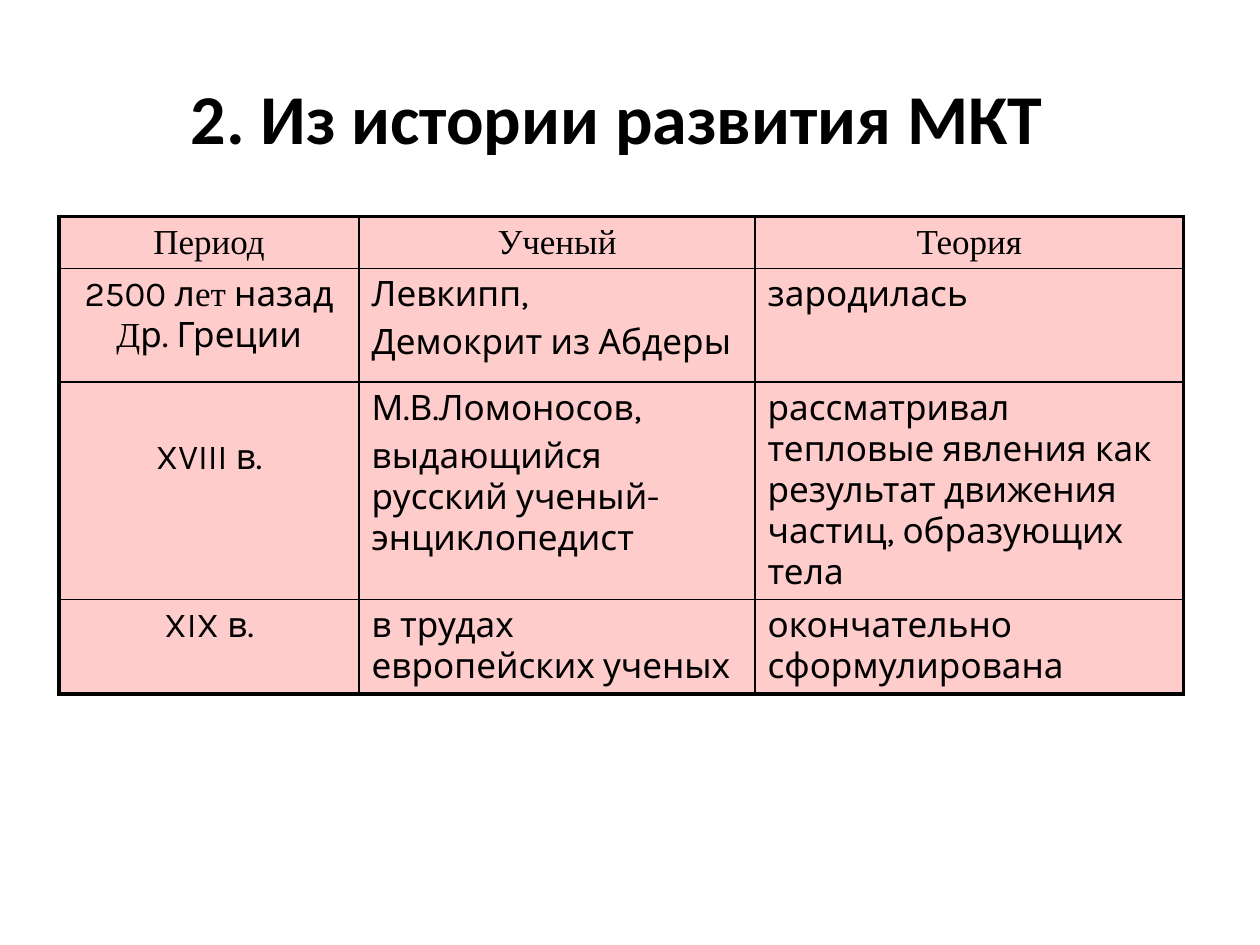
"""Build a slide with a table on the history of kinetic theory."""
from lxml.etree import SubElement
from pptx import Presentation
from pptx.dml.color import RGBColor
from pptx.enum.text import MSO_ANCHOR, PP_ALIGN
from pptx.oxml.ns import qn
from pptx.util import Cm, Pt

BLACK = RGBColor(0, 0, 0)
PINK = RGBColor(0xFF, 0xCC, 0xCC)
HEAD, SANS, SERIF = "Calibri", "Karla", "Times New Roman"
THIN, THICK = Pt(1), Pt(2.25)
COLS = (6.05, 7.98, 8.64)
ROWS = (1.04, 2.29, 4.37, 1.9)
CELLS = (
    ([[("Период", SERIF)]], [[("Ученый", SERIF)]], [[("Теория", SERIF)]]),
    (
        [[("2500 л", SANS), ("ет", SERIF), (" назад ", SANS),
          ("Д", SERIF), ("р. Греции", SANS)]],
        [[("Левкипп,", SANS)], [("Демокрит из Абдеры", SANS)]],
        [[("зародилась", SANS)]],
    ),
    (
        [[("XVIII в.", SANS)]],
        [[("М.В.Ломоносов,", SANS)],
         [("выдающийся русский ученый-энциклопедист", SANS)]],
        [[("рассматривал тепловые явления как результат движения "
           "частиц, образующих тела", SANS)]],
    ),
    (
        [[("XIX в.", SANS)]],
        [[("в трудах европейских ученых", SANS)]],
        [[("окончательно сформулирована", SANS)]],
    ),
)


class Deck:
    """Hold the style and the current slide."""

    def __init__(self):
        self.file = Presentation()
        self.file.slide_width, self.file.slide_height = Cm(25.4), Cm(19.05)
        self.slide = self.file.slides.add_slide(self.file.slide_layouts[0])
        sub = self.slide.placeholders[1].element
        sub.getparent().remove(sub)

    def run(self, para, text, face, size, bold=False):
        """Add one styled run."""
        run = para.add_run()
        run.text = text
        font = run.font
        font.name, font.size, font.bold = face, Pt(size), bold
        font.color.rgb = BLACK

    def title(self, text, left, top, width, height):
        """Place the title."""
        box = self.slide.shapes.title
        box.left, box.top = Cm(left), Cm(top)
        box.width, box.height = Cm(width), Cm(height)
        frame = box.text_frame
        frame.vertical_anchor = MSO_ANCHOR.MIDDLE
        para = frame.paragraphs[0]
        para.alignment = PP_ALIGN.CENTER
        self.run(para, text, HEAD, 40, True)

    def edge(self, cell, side, width):
        """Draw one border of a cell."""
        props = cell._tc.get_or_add_tcPr()
        line = SubElement(props, qn(f"a:ln{side}"), w=str(int(width)))
        fill = SubElement(line, qn("a:solidFill"))
        SubElement(fill, qn("a:srgbClr"), val=str(BLACK))

    def cell(self, cell, paras, align, outer):
        """Fill, frame and write one cell."""
        for side in "LRTB":
            self.edge(cell, side, THICK if side in outer else THIN)
        cell.fill.solid()
        cell.fill.fore_color.rgb = PINK
        frame = cell.text_frame
        for i, runs in enumerate(paras):
            para = frame.add_paragraph() if i else frame.paragraphs[0]
            para.alignment = align
            para.space_before = Pt(4 if i else 0)
            for text, face in runs:
                self.run(para, text, face, 20)

    def table(self, rows, left, top):
        """Add the table and return it."""
        table = self.slide.shapes.add_table(
            len(ROWS), len(COLS), Cm(left), Cm(top),
            Cm(sum(COLS)), Cm(sum(ROWS))).table
        table.first_row = table.horz_banding = False
        for col, width in zip(table.columns, COLS):
            col.width = Cm(width)
        for row, height in zip(table.rows, ROWS):
            row.height = Cm(height)
        for r, row in enumerate(rows):
            for c, paras in enumerate(row):
                mid = r == 0 or c == 0
                align = PP_ALIGN.CENTER if mid else PP_ALIGN.LEFT
                outer = {0: "L", len(COLS) - 1: "R"}.get(c, "")
                outer += {0: "T", len(ROWS) - 1: "B"}.get(r, "")
                self.cell(table.cell(r, c), paras, align, outer)
        return table

    def save(self):
        """Write the file."""
        self.file.save("out.pptx")


def main():
    """Build the slide."""
    deck = Deck()
    deck.title("2. Из истории развития МКТ ", 2.11, 1.07, 20.95, 2.54)
    table = deck.table(CELLS, 1.19, 4.37)
    table.cell(2, 0).margin_top = Cm(1.12)
    deck.save()


if __name__ == "__main__":
    main()
